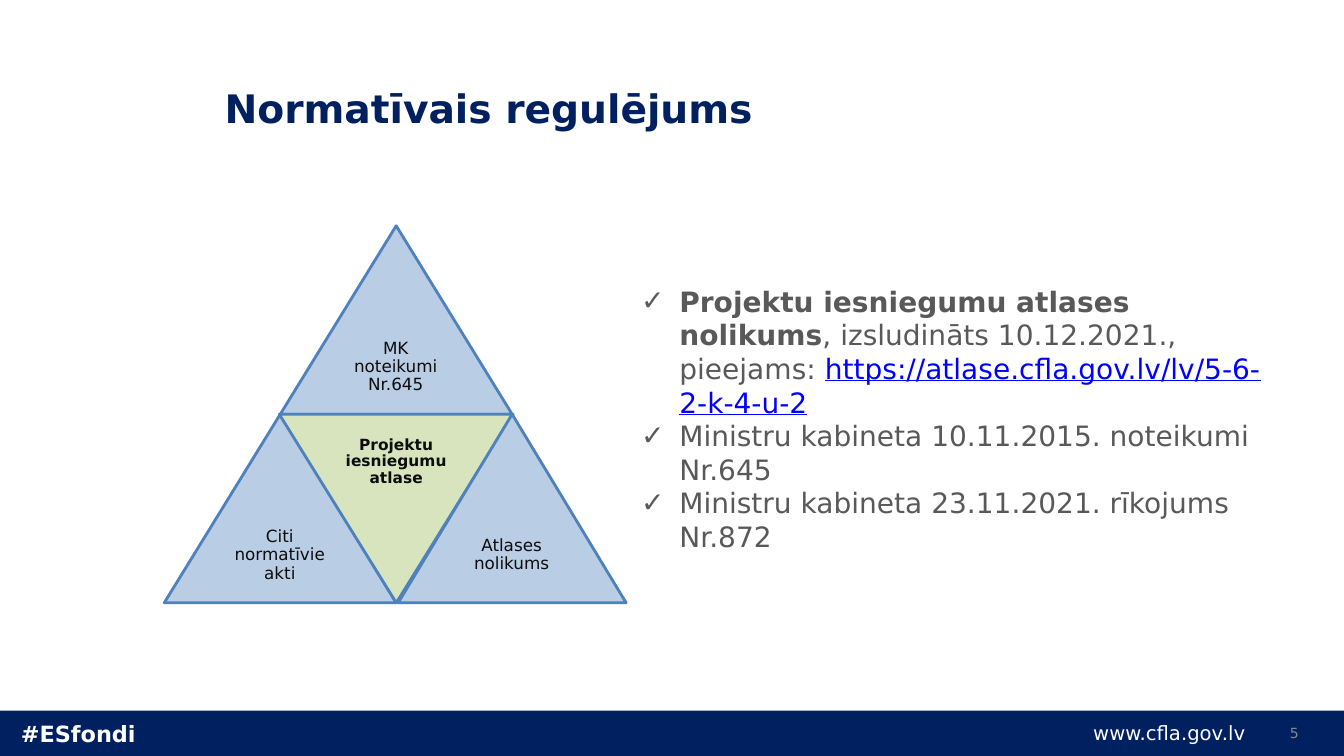
"""Build the slide on the regulatory framework: a triangle diagram beside a checklist."""
from pptx import Presentation
from pptx.dml.color import RGBColor
from pptx.enum.shapes import MSO_SHAPE
from pptx.enum.text import MSO_ANCHOR, PP_ALIGN
from pptx.oxml.ns import qn
from pptx.util import Pt
from lxml.etree import SubElement

PX = 9144
FONT = "DejaVu Sans"
NAVY, WHITE, GREY, LINK = "002060", "FFFFFF", "595959", "0000FF"
BLUE, GREEN, OUTLINE, INK = "B9CDE5", "D7E4BD", "4F81BD", "0D0D0D"


def color(hex_text):
    return RGBColor.from_string(hex_text)


def add_text(box, text, size, hex_text, bold=False, align=PP_ALIGN.LEFT,
             anchor=MSO_ANCHOR.MIDDLE, inset=None, spacing=None):
    shape = slide.shapes.add_textbox(*[value * PX for value in box])
    frame = shape.text_frame
    frame.word_wrap = True
    frame.vertical_anchor = anchor
    if inset is not None:
        frame.margin_left = frame.margin_right = inset * PX
        frame.margin_top = frame.margin_bottom = inset * PX
    frame.text = text
    paragraph = frame.paragraphs[0]
    paragraph.alignment = align
    paragraph.line_spacing = spacing
    font = paragraph.runs[0].font
    font.name, font.size, font.bold = FONT, Pt(size), bold
    font.color.rgb = color(hex_text)


presentation = Presentation()
presentation.slide_width = 1333 * PX
presentation.slide_height = 750 * PX
slide = presentation.slides.add_slide(presentation.slide_layouts[6])

footer = slide.shapes.add_shape(MSO_SHAPE.RECTANGLE, 0, 705 * PX, 1333 * PX, 45 * PX)
footer.shadow.inherit = False
footer.fill.solid()
footer.fill.fore_color.rgb = color(NAVY)
footer.line.fill.background()

add_text((1042, 710, 203, 33), "www.cfla.gov.lv", 14, WHITE, align=PP_ALIGN.RIGHT)
add_text((11, 713, 203, 33), "#ESfondi", 16, WHITE, bold=True,
         anchor=MSO_ANCHOR.TOP, spacing=0.9)
add_text((213, 51, 1031, 113), "Normatīvais regulējums", 28, NAVY, bold=True)
add_text((1254, 711, 44, 33), "5", 10, "898989", align=PP_ALIGN.RIGHT)

TRIANGLE_HEIGHT = 187
TEXT_HEIGHT = 94
triangles = [
    (278, 224, 230, False, "MK noteikumi Nr.645"),
    (163, 411, 230, False, "Citi normatīvie akti"),
    (277, 411, 232, True, "Projektu iesniegumu atlase"),
    (395, 411, 226, False, "Atlases nolikums"),
]
for left, top, width, inverted, label in triangles:
    triangle = slide.shapes.add_shape(MSO_SHAPE.ISOSCELES_TRIANGLE, left * PX, top * PX,
                                      width * PX, TRIANGLE_HEIGHT * PX)
    triangle.shadow.inherit = False
    triangle.rotation = 180 if inverted else 0
    triangle.fill.solid()
    triangle.fill.fore_color.rgb = color(GREEN if inverted else BLUE)
    triangle.line.color.rgb = color(OUTLINE)
    triangle.line.width = Pt(2)
    text_top = top if inverted else top + TRIANGLE_HEIGHT - TEXT_HEIGHT
    add_text((left + width // 4, text_top, width // 2, TEXT_HEIGHT), label,
             11 if inverted else 12, INK, bold=inverted, align=PP_ALIGN.CENTER,
             inset=5, spacing=0.9)

checklist = [
    [("Projektu iesniegumu atlases nolikums", GREY, True),
     (", izsludināts 10.12.2021., pieejams: ", GREY, False),
     ("https://atlase.cfla.gov.lv/lv/5-6-2-k-4-u-2", LINK, False)],
    [("Ministru kabineta 10.11.2015. noteikumi Nr.645", GREY, False)],
    [("Ministru kabineta 23.11.2021. rīkojums Nr.872", GREY, False)],
]
checklist_frame = slide.shapes.add_textbox(626 * PX, 277 * PX, 652 * PX, 279 * PX).text_frame
checklist_frame.word_wrap = True
for index, parts in enumerate(checklist):
    paragraph = checklist_frame.add_paragraph() if index else checklist_frame.paragraphs[0]
    properties = paragraph._p.get_or_add_pPr()
    properties.set("marL", str(38 * PX))
    properties.set("indent", str(-38 * PX))
    bullet_color = SubElement(properties, qn("a:buClr"))
    SubElement(bullet_color, qn("a:srgbClr"), val=GREY)
    SubElement(properties, qn("a:buFont"), typeface=FONT)
    SubElement(properties, qn("a:buChar"), char="✓")
    for text, hex_text, bold in parts:
        run = paragraph.add_run()
        run.text = text
        run.font.name, run.font.size, run.font.bold = FONT, Pt(20), bold
        run.font.color.rgb = color(hex_text)
        run.font.underline = hex_text == LINK

presentation.save("out.pptx")
